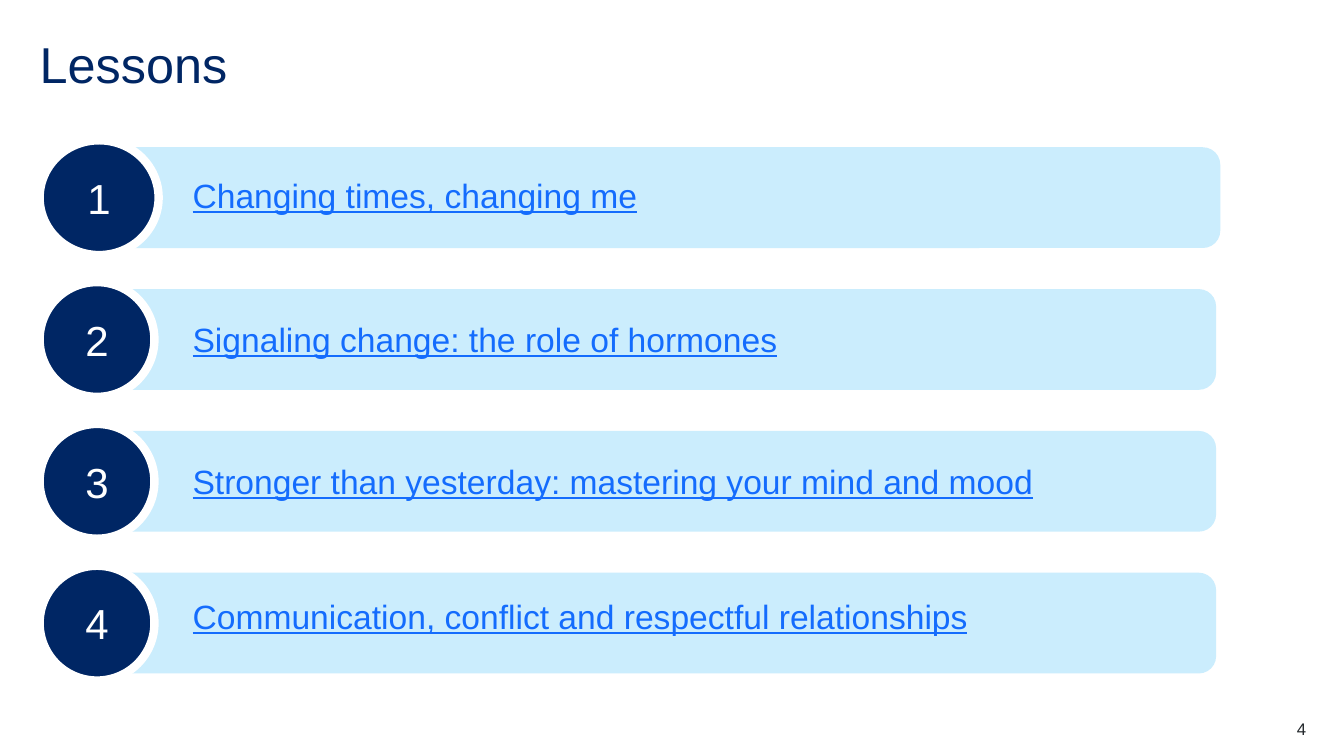
import pptx
import pptx.util
import pptx.dml.color
import pptx.enum.shapes
import pptx.enum.text

Pt = pptx.util.Pt
SHAPE = pptx.enum.shapes.MSO_SHAPE
ALIGN = pptx.enum.text.PP_ALIGN
ANCHOR = pptx.enum.text.MSO_ANCHOR

COLORS = {
    "navy": "002664",
    "sky": "CBEDFD",
    "link": "146CFD",
    "white": "FFFFFF",
    "ink": "22272B",
}

LESSONS = [
    {"title": "Changing times, changing me", "badge_width": 85, "title_drop": 20.9},
    {"title": "Signaling change: the role of hormones", "badge_width": 82, "title_drop": 22.7},
    {"title": "Stronger than yesterday: mastering your mind and mood", "badge_width": 82, "title_drop": 22.7},
    {"title": "Communication, conflict and respectful relationships", "badge_width": 82, "title_drop": 18},
]
ROW_HEIGHT = 82
ROW_PITCH = 101.3


def color(name):
    return pptx.dml.color.RGBColor.from_string(COLORS[name])


def apply_format(target, values):
    for name, value in values.items():
        setattr(target, name, value)


def write(shape, text, tint, font, para_format=None, frame_format=None):
    frame = shape.text_frame
    apply_format(frame, {"word_wrap": True, **(frame_format or {})})
    para = frame.paragraphs[0]
    apply_format(para, para_format or {})
    span = para.add_run()
    span.text = text
    apply_format(span.font, {"name": "Arial", **font})
    span.font.color.rgb = color(tint)
    return para


def add_plain_text(page, box, text, tint, size, para_format):
    label = page.shapes.add_textbox(*map(Pt, box))
    margins = ("margin_left", "margin_top", "margin_right", "margin_bottom")
    write(label, text, tint, {"size": Pt(size)}, para_format, dict.fromkeys(margins, 0))


def add_filled(group, kind, box, tint):
    shape = group.shapes.add_shape(kind, *map(Pt, box))
    shape.shadow.inherit = False
    shape.fill.solid()
    shape.fill.fore_color.rgb = color(tint)
    shape.line.fill.background()
    return shape


def add_lesson(page, box, number, lesson):
    left, top, width, height = box
    badge_width = lesson["badge_width"]
    group = page.shapes.add_group_shape()

    bar_left = left + badge_width - 29.3
    bar = add_filled(group, SHAPE.ROUNDED_RECTANGLE, (bar_left, top + 5, 787.7, height - 10), "sky")
    bar.adjustments[0] = 0.173

    badge = add_filled(group, SHAPE.OVAL, (left, top, badge_width, height), "navy")
    badge.line.color.rgb = color("white")
    badge.line.width = Pt(6)
    write(badge, str(number), "white", {"size": Pt(30)},
          {"alignment": ALIGN.CENTER}, {"vertical_anchor": ANCHOR.MIDDLE})

    title_left = left + 74.2
    title = page.shapes.add_textbox(
        Pt(title_left), Pt(top + lesson["title_drop"]), Pt(left + width - title_left), Pt(36))
    para = write(title, lesson["title"], "link", {"size": Pt(24), "underline": True})
    para._p.get_or_add_pPr().set("marL", str(Pt(28)))


def add_lessons(page, box):
    left, top, width = box
    for index, lesson in enumerate(LESSONS):
        row = (left, top + index * ROW_PITCH, width, ROW_HEIGHT)
        add_lesson(page, row, index + 1, lesson)


def main():
    deck = pptx.Presentation()
    apply_format(deck, {"slide_width": Pt(960), "slide_height": Pt(540)})
    page = deck.slides.add_slide(deck.slide_layouts[6])
    add_plain_text(page, (28.3, 28.3, 904, 43), "Lessons", "navy", 36, {"line_spacing": 0.9})
    add_lessons(page, (28.3, 100.2, 841.7))
    add_plain_text(page, (876, 513.5, 57, 14), "4", "ink", 12, {"alignment": ALIGN.RIGHT})
    deck.save("out.pptx")


if __name__ == "__main__":
    main()
